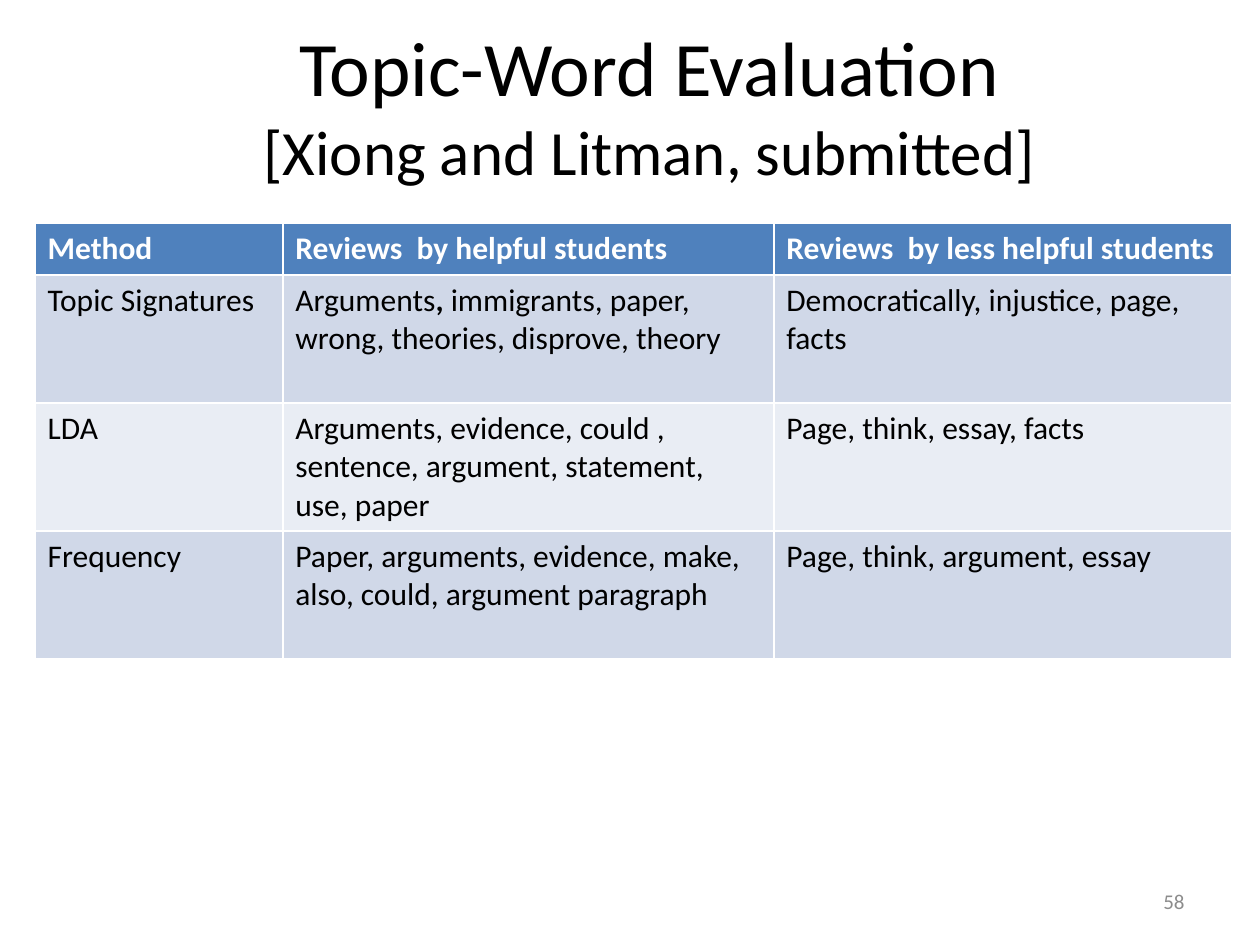
from pptx import Presentation
from pptx.dml.color import RGBColor
from pptx.enum.text import MSO_ANCHOR as Anchor, PP_ALIGN as Align
from pptx.util import Pt

COLORS = {
    "text": "000000",
    "header_text": "FFFFFF",
    "header": "4F81BD",
    "odd_row": "D0D8E8",
    "even_row": "E9EDF4",
    "number": "8C8C8C",
}
HEADER = ["Method", "Reviews  by helpful students", "Reviews  by less helpful students"]
METHODS = [
    ["Topic Signatures",
     [("Arguments", False), (", ", True),
      ("immigrants, paper, wrong, theories, disprove, theory", False)],
     "Democratically, injustice, page, facts"],
    ["LDA",
     "Arguments, evidence, could , sentence, argument, statement, use, paper",
     "Page, think, essay, facts"],
    ["Frequency",
     "Paper, arguments, evidence, make, also, could, argument paragraph",
     "Page, think, argument, essay"],
]
COLUMN_WIDTHS = [141.6, 280.6, 261.8]
HEADER_HEIGHT, METHOD_HEIGHT = 28.8, 73.2


def write(paragraph, text, size=18, color="text", bold=False, align=None):
    """Append one formatted run to a paragraph."""
    run = paragraph.add_run()
    run.text = text
    run.font.name = "Calibri"
    run.font.size = Pt(size)
    run.font.bold = bold
    run.font.color.rgb = RGBColor.from_string(COLORS[color])
    if align is not None:
        paragraph.alignment = align


def place_title(slide, left, top, width, height):
    """Fill the title placeholder with the heading and its citation."""
    title = slide.shapes.title
    title.left, title.top, title.width, title.height = map(Pt, (left, top, width, height))
    title.text_frame.vertical_anchor = Anchor.MIDDLE
    heading = title.text_frame.paragraphs[0]
    write(heading, "Topic-Word Evaluation", size=44, align=Align.CENTER)
    heading.add_line_break()
    write(heading, "[Xiong and Litman, submitted]", size=36)


def place_topic_table(slide, left, top):
    """Add the table of topic words by method and reviewer group."""
    heights = [HEADER_HEIGHT] + [METHOD_HEIGHT] * len(METHODS)
    table = slide.shapes.add_table(
        len(heights), len(HEADER), Pt(left), Pt(top),
        Pt(sum(COLUMN_WIDTHS)), Pt(sum(heights))).table
    for column, width in zip(table.columns, COLUMN_WIDTHS):
        column.width = Pt(width)
    for index, entries in enumerate([HEADER] + METHODS):
        table.rows[index].height = Pt(heights[index])
        is_header = index == 0
        fill = "header" if is_header else "odd_row" if index % 2 else "even_row"
        for cell, entry in zip(table.rows[index].cells, entries):
            cell.fill.solid()
            cell.fill.fore_color.rgb = RGBColor.from_string(COLORS[fill])
            pieces = [(entry, is_header)] if isinstance(entry, str) else entry
            for words, bold in pieces:
                write(cell.text_frame.paragraphs[0], words, bold=bold,
                      color="header_text" if is_header else "text")


def place_page_number(slide, left, top, width, height):
    """Add the page number at the lower right."""
    frame = slide.shapes.add_textbox(*map(Pt, (left, top, width, height))).text_frame
    frame.word_wrap = True
    frame.vertical_anchor = Anchor.MIDDLE
    write(frame.paragraphs[0], "58", size=12, color="number", align=Align.RIGHT)


def main():
    """Build and save the slide."""
    deck = Presentation()
    deck.slide_width, deck.slide_height = Pt(720), Pt(540)
    slide = deck.slides.add_slide(deck.slide_layouts[5])
    place_title(slide, 38, 14.4, 666, 90)
    place_topic_table(slide, 20, 127.8)
    place_page_number(slide, 516, 500.5, 168, 28.8)
    deck.save("out.pptx")


if __name__ == "__main__":
    main()
